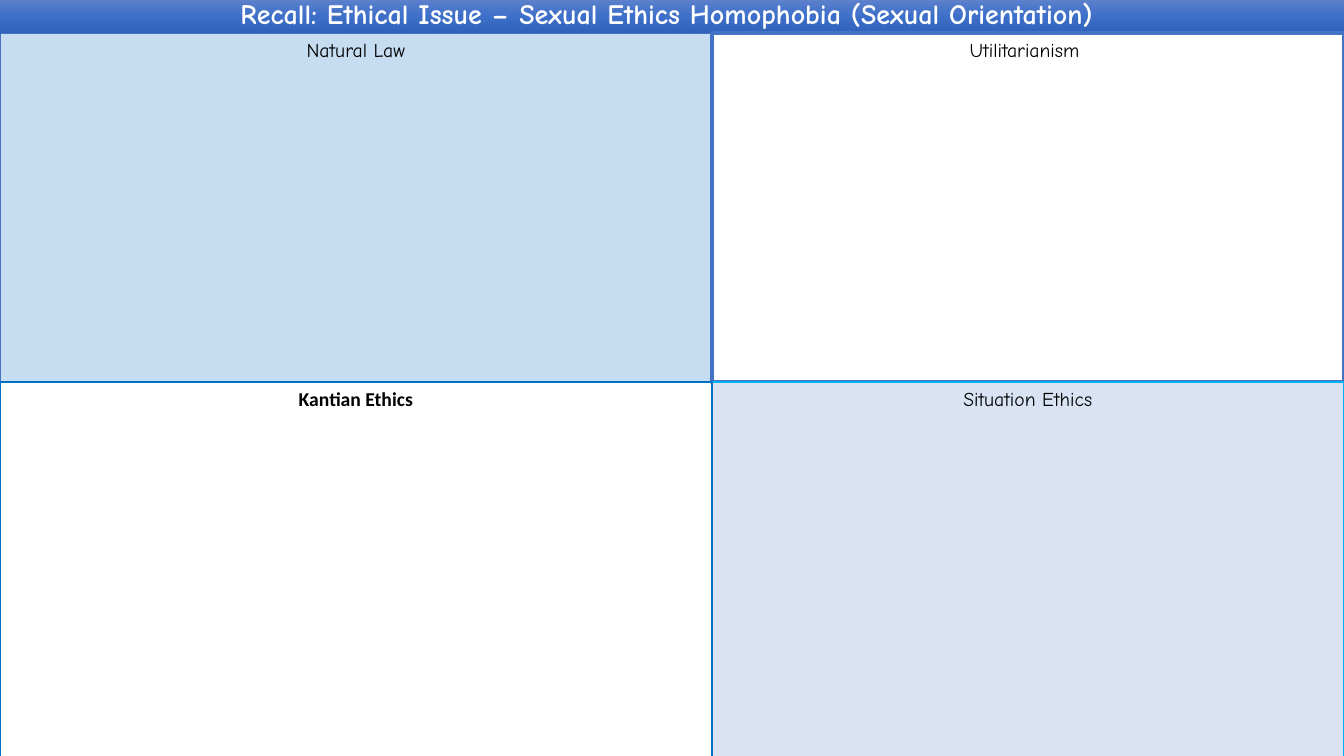
from dataclasses import dataclass

from pptx import Presentation
from pptx.dml.color import RGBColor
from pptx.enum.shapes import MSO_SHAPE
from pptx.enum.text import MSO_ANCHOR, MSO_AUTO_SIZE, PP_ALIGN
from pptx.oxml import parse_xml
from pptx.oxml.ns import nsdecls
from pptx.shapes.base import BaseShape
from pptx.slide import Slide
from pptx.util import Inches, Pt

RECTANGLE = MSO_SHAPE.RECTANGLE
TOP, MIDDLE = MSO_ANCHOR.TOP, MSO_ANCHOR.MIDDLE
CENTER = PP_ALIGN.CENTER
NO_AUTOFIT = MSO_AUTO_SIZE.NONE

SLIDE_WIDTH, SLIDE_HEIGHT = 13.33, 7.5
COLUMN_EDGES = (0, 7.06, SLIDE_WIDTH)
ROW_EDGES = (0.33, 3.79, 7.56)
TITLE_TOP, TITLE_HEIGHT = -0.02, 0.35
TITLE_GRADIENT = ((0, "6183CB"), (50, "3E70CA"), (100, "3062BB"))
HEADING_FONT = "Comic Neue"


@dataclass(frozen=True)
class Panel:
    heading: str
    column: int
    row: int
    fill: str | None
    line: str
    line_width: float
    font: str = HEADING_FONT
    bold: bool = False


PANELS = (
    Panel("Natural Law", 0, 0, "C6DCF0", "4472C4", 0.5),
    Panel("Utilitarianism ", 1, 0, "FFFFFF", "4472C4", 3),
    Panel("Situation Ethics", 1, 1, "DAE3F3", "00B0F0", 0.75),
    Panel("Kantian Ethics", 0, 1, None, "0070C0", 1.5, "Calibri", True),
)


def color(hex_code: str) -> RGBColor:
    return RGBColor.from_string(hex_code)


def write_centered(shape: BaseShape, text: str, size: float, font: str,
                   hex_code: str, bold: bool, anchor: MSO_ANCHOR) -> None:
    frame = shape.text_frame
    frame.word_wrap = True
    frame.auto_size = NO_AUTOFIT
    frame.vertical_anchor = anchor
    paragraph = frame.paragraphs[0]
    paragraph.alignment = CENTER
    run = paragraph.add_run()
    run.text = text
    run.font.size = Pt(size)
    run.font.name = font
    run.font.bold = bold
    run.font.color.rgb = color(hex_code)


def add_gradient_and_shadow(shape: BaseShape) -> None:
    """Fill from top to bottom and cast a soft shadow straight down."""
    stops = "".join(
        f'<a:gs pos="{position * 1000}"><a:srgbClr val="{hex_code}"/></a:gs>'
        for position, hex_code in TITLE_GRADIENT
    )
    properties = shape.element.spPr
    properties.append(parse_xml(
        f'<a:gradFill {nsdecls("a")} rotWithShape="1"><a:gsLst>{stops}</a:gsLst>'
        '<a:lin ang="5400000" scaled="0"/></a:gradFill>'
    ))
    properties.append(parse_xml(
        f'<a:effectLst {nsdecls("a")}><a:outerShdw blurRad="{Pt(4.5)}" '
        f'dist="{Pt(1.5)}" dir="5400000" algn="ctr" rotWithShape="0">'
        '<a:srgbClr val="000000"><a:alpha val="63000"/></a:srgbClr>'
        '</a:outerShdw></a:effectLst>'
    ))


def format_title(slide: Slide, text: str) -> None:
    title = slide.shapes.title
    title.left, title.top = Inches(0), Inches(TITLE_TOP)
    title.width, title.height = Inches(SLIDE_WIDTH), Inches(TITLE_HEIGHT)
    add_gradient_and_shadow(title)
    write_centered(title, text, 20, HEADING_FONT, "FFFFFF", True, MIDDLE)
    paragraph = title.text_frame.paragraphs[0]
    paragraph.line_spacing = 0.9
    paragraph.space_before = Pt(0)


def add_panel(slide: Slide, panel: Panel) -> None:
    left, right = COLUMN_EDGES[panel.column:panel.column + 2]
    top, bottom = ROW_EDGES[panel.row:panel.row + 2]
    shape = slide.shapes.add_shape(
        RECTANGLE, Inches(left), Inches(top),
        Inches(right - left), Inches(bottom - top),
    )
    shape.shadow.inherit = False
    if panel.fill is None:
        shape.fill.background()
    else:
        shape.fill.solid()
        shape.fill.fore_color.rgb = color(panel.fill)
    shape.line.color.rgb = color(panel.line)
    shape.line.width = Pt(panel.line_width)
    write_centered(shape, panel.heading, 14, panel.font, "000000", panel.bold, TOP)


def main() -> None:
    presentation = Presentation()
    presentation.slide_width = Inches(SLIDE_WIDTH)
    presentation.slide_height = Inches(SLIDE_HEIGHT)
    slide = presentation.slides.add_slide(
        presentation.slide_layouts.get_by_name("Title Only")
    )
    format_title(
        slide,
        "Recall: Ethical Issue – Sexual Ethics Homophobia (Sexual Orientation) ",
    )
    for panel in PANELS:
        add_panel(slide, panel)
    presentation.save("out.pptx")


if __name__ == "__main__":
    main()
